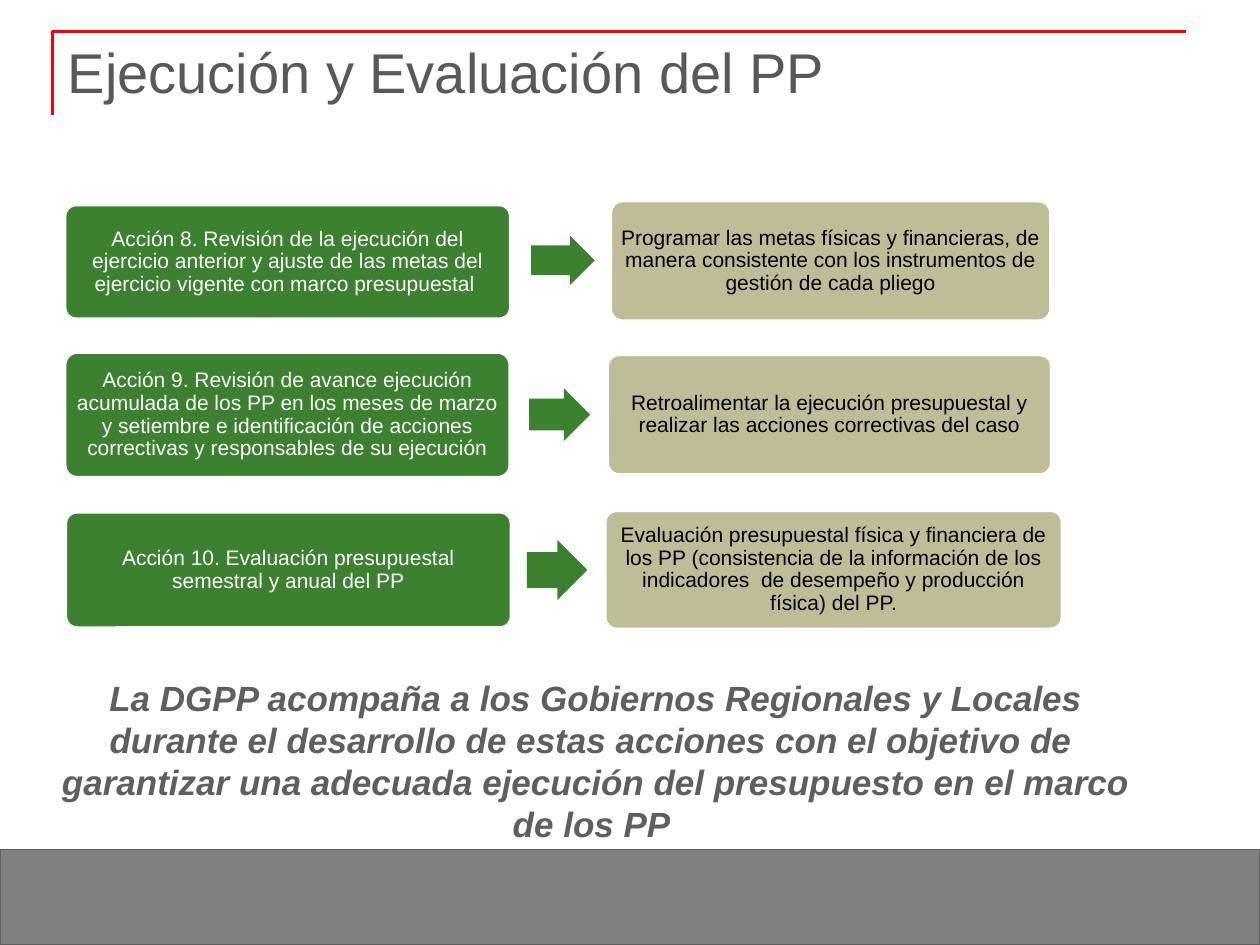
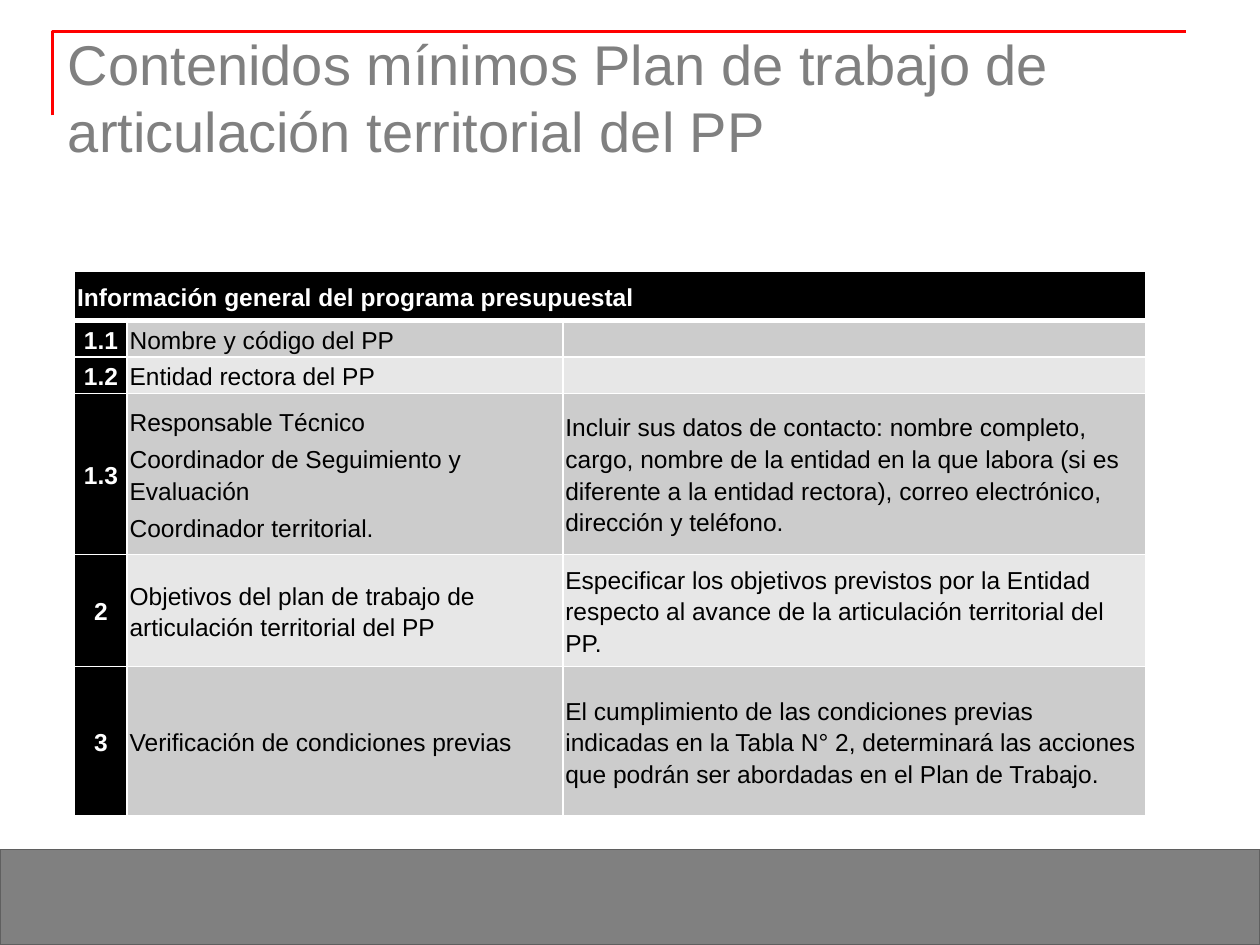
"""Build two slides on carrying out and planning a budget programme (PP)."""
from lxml import etree
from pptx import Presentation
from pptx.dml.color import RGBColor
from pptx.enum import shapes, text
from pptx.oxml import ns
from pptx.util import Pt

FONT = "Arial"
WHITE = RGBColor(0xFF, 0xFF, 0xFF)
BLACK = RGBColor(0x00, 0x00, 0x00)
RED = RGBColor(0xFF, 0x00, 0x00)
GREEN = RGBColor(0x3B, 0x81, 0x2F)
SAND = RGBColor(0xBF, 0xBC, 0x98)
GREY = RGBColor(0x80, 0x80, 0x80)
DARK_GREY = RGBColor(0x5F, 0x5F, 0x5F)
TITLE_GREY = RGBColor(0x59, 0x59, 0x59)
ROW_FILLS = [RGBColor(0xCC, 0xCC, 0xCC), RGBColor(0xE7, 0xE7, 0xE7)]


def add_run(p, words, size, color, bold=False, italic=False):
    r = p.add_run()
    r.text = words
    r.font.name = FONT
    r.font.size = Pt(size)
    r.font.color.rgb = color
    r.font.bold = bold
    r.font.italic = italic


def add_block(s, kind, box, fill, line=None, width=0):
    sp = s.shapes.add_shape(kind, *[Pt(v) for v in box])
    sp.shadow.inherit = False
    sp.fill.solid()
    sp.fill.fore_color.rgb = fill
    if line is None:
        sp.line.fill.background()
    else:
        sp.line.color.rgb = line
        sp.line.width = Pt(width)
    return sp


prs = Presentation()
prs.slide_width = Pt(720)
prs.slide_height = Pt(540)

titles = [
    ("Ejecución y Evaluación del PP", TITLE_GREY, (31.7, 20.9, 635, 39.6)),
    ("Contenidos mínimos Plan de trabajo de articulación territorial del PP",
     GREY, (31.7, 23, 669, 64.8)),
]
for title, color, box in titles:
    s = prs.slides.add_slide(prs.slide_layouts[6])
    add_block(s, shapes.MSO_SHAPE.RECTANGLE, (0, 485.3, 720, 54.7), GREY, DARK_GREY, 0.75)

    builder = s.shapes.build_freeform(Pt(30), Pt(66))
    builder.add_line_segments([(Pt(30), Pt(18)), (Pt(678), Pt(18))], close=False)
    frame = builder.convert_to_shape()
    frame.shadow.inherit = False
    frame.fill.background()
    frame.line.color.rgb = RED
    frame.line.width = Pt(1.5)

    tf = s.shapes.add_textbox(*[Pt(v) for v in box]).text_frame
    tf.word_wrap = True
    tf.vertical_anchor = text.MSO_ANCHOR.MIDDLE
    add_run(tf.paragraphs[0], title, 32, color)

actions_slide, contents_slide = prs.slides

actions = [
    ("Acción 8. Revisión de la ejecución del ejercicio anterior y ajuste de las metas "
     "del ejercicio vigente con marco presupuestal ", (37, 116.9, 254.9, 65.5),
     (303.5, 134.6, 36.3, 28.4),
     "Programar las metas físicas y financieras, de manera consistente con los "
     "instrumentos de gestión de cada pliego", (348.8, 114.7, 251.7, 68.8)),
    ("Acción 9. Revisión de avance ejecución acumulada de los PP en los meses de marzo "
     "y setiembre e identificación de acciones correctivas y responsables de su ejecución",
     (37, 201.2, 254.6, 71.8),
     (302.4, 221.8, 34.9, 30.2),
     "Retroalimentar la ejecución presupuestal y realizar las acciones correctivas "
     "del caso", (347, 202.5, 254, 68.9)),
    ("Acción 10. Evaluación presupuestal semestral y anual del PP",
     (37.4, 292.5, 254.9, 66.4),
     (301, 308.7, 34.6, 34.1),
     "Evaluación presupuestal física y financiera de los PP (consistencia de la "
     "información de los indicadores  de desempeño y producción física) del PP.",
     (345.7, 291.6, 261.4, 68)),
]
for action, action_box, arrow_box, result, result_box in actions:
    arrow = add_block(actions_slide, shapes.MSO_SHAPE.RIGHT_ARROW, arrow_box, GREEN)
    arrow.adjustments[0] = 0.6
    for words, box, fill, color in [(action, action_box, GREEN, WHITE),
                                    (result, result_box, SAND, BLACK)]:
        sp = add_block(actions_slide, shapes.MSO_SHAPE.ROUNDED_RECTANGLE, box, fill, WHITE, 2)
        sp.adjustments[0] = 0.1
        tf = sp.text_frame
        tf.word_wrap = True
        tf.vertical_anchor = text.MSO_ANCHOR.MIDDLE
        tf.margin_left = tf.margin_right = tf.margin_top = tf.margin_bottom = Pt(3.6)
        p = tf.paragraphs[0]
        p.alignment = text.PP_ALIGN.CENTER
        p.line_spacing = 0.9
        add_run(p, words, 12, color)

tf = actions_slide.shapes.add_textbox(Pt(20), Pt(383), Pt(641), Pt(104.4)).text_frame
tf.word_wrap = True
p = tf.paragraphs[0]
p.alignment = text.PP_ALIGN.CENTER
add_run(p, "La DGPP acompaña a los Gobiernos Regionales y Locales durante el desarrollo de "
           "estas acciones con el objetivo de  garantizar una adecuada ejecución del "
           "presupuesto en el marco de los PP ", 20, DARK_GREY, bold=True, italic=True)

rows = [
    (["Información general del programa presupuestal"], [], []),
    (["1.1"], ["Nombre y código del PP"], []),
    (["1.2"], ["Entidad rectora del PP"], []),
    (["1.3"],
     ["Responsable Técnico", "Coordinador de Seguimiento y Evaluación",
      "Coordinador territorial."],
     ["Incluir sus datos de contacto: nombre completo, cargo, nombre de la entidad en la "
      "que labora (si es diferente a la entidad rectora), correo electrónico, dirección "
      "y teléfono."]),
    (["2"], ["Objetivos del plan de trabajo de articulación territorial del PP"],
     ["Especificar los objetivos previstos por la Entidad respecto al avance de la "
      "articulación territorial del PP."]),
    (["3"], ["Verificación de condiciones previas"],
     ["El cumplimiento de las condiciones previas indicadas en la Tabla N° 2, determinará "
      "las acciones que podrán ser abordadas en el Plan de Trabajo."]),
]
col_widths = [30, 249, 333.2]
row_heights = [28, 20.9, 20.9, 92, 64, 85.7]
table = contents_slide.shapes.add_table(
    len(rows), len(col_widths), Pt(42.7), Pt(155),
    Pt(sum(col_widths)), Pt(sum(row_heights))).table
table.horz_banding = False
for column, width in zip(table.columns, col_widths):
    column.width = Pt(width)
for row, height in zip(table.rows, row_heights):
    row.height = Pt(height)
table.cell(0, 0).merge(table.cell(0, 2))

for i, row in enumerate(rows):
    for j, lines in enumerate(row):
        cell = table.cell(i, j)
        cell.margin_left = cell.margin_right = Pt(1.4)
        cell.margin_top = cell.margin_bottom = 0
        cell.vertical_anchor = text.MSO_ANCHOR.MIDDLE

        thick_side = {0: "lnB", 1: "lnT"}.get(i)
        for side in ("lnL", "lnR", "lnT", "lnB"):
            width = Pt(3 if side == thick_side else 1)
            ln = etree.SubElement(cell._tc.get_or_add_tcPr(), ns.qn("a:" + side), w=str(width))
            line_fill = etree.SubElement(ln, ns.qn("a:solidFill"))
            etree.SubElement(line_fill, ns.qn("a:srgbClr"), val=str(WHITE))

        heading = i == 0 or j == 0
        cell.fill.solid()
        cell.fill.fore_color.rgb = BLACK if heading else ROW_FILLS[(i - 1) % 2]

        tf = cell.text_frame
        for k, words in enumerate(lines):
            p = tf.add_paragraph() if k else tf.paragraphs[0]
            p.line_spacing = 1.15
            p.space_after = Pt(3)
            if i and j == 0:
                p.alignment = text.PP_ALIGN.CENTER
            add_run(p, words, 14, WHITE if heading else BLACK, bold=heading)
        if not lines:
            etree.SubElement(tf.paragraphs[0]._p, ns.qn("a:endParaRPr"), sz="1400")

prs.save("out.pptx")
